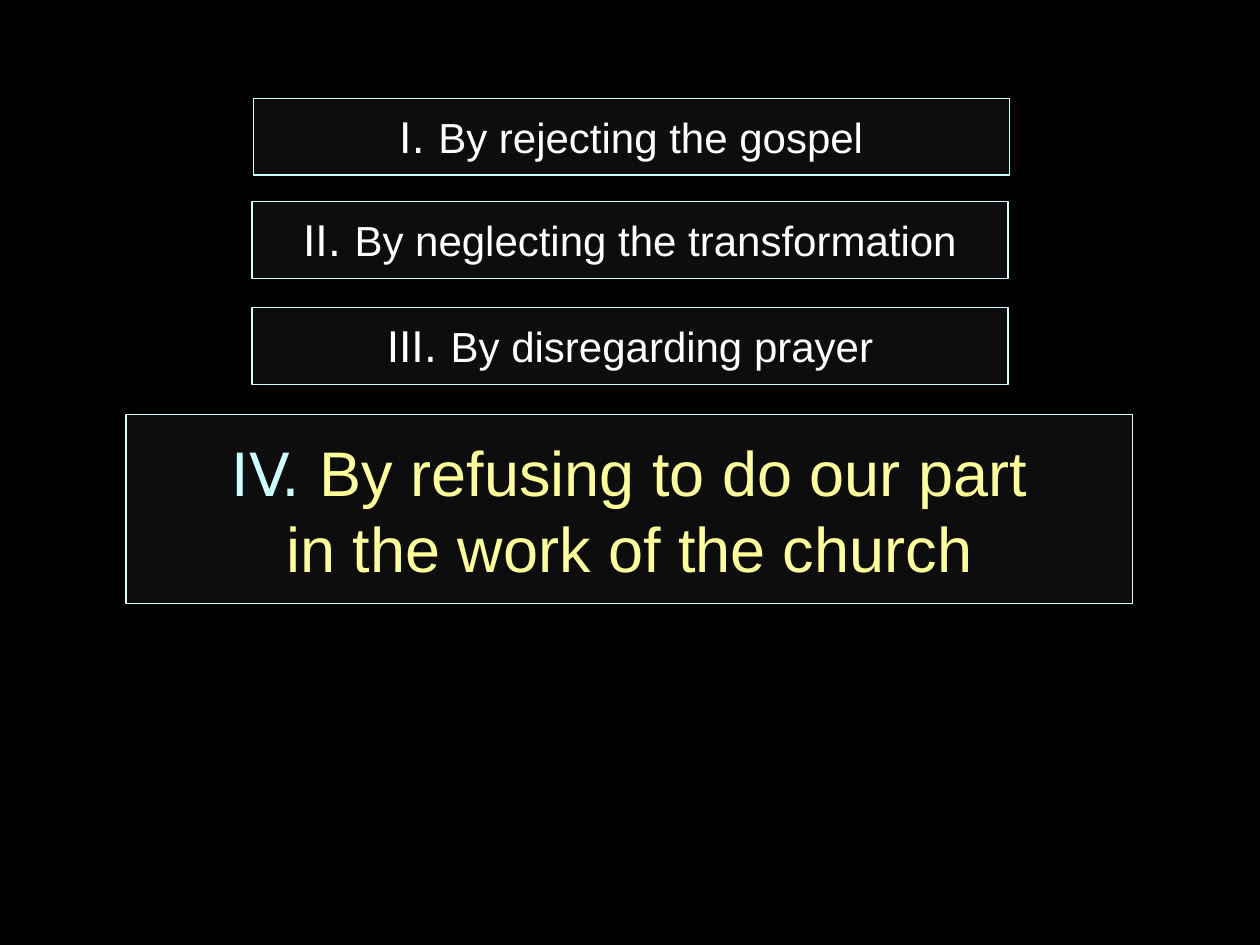
import pptx
import pptx.dml.color
import pptx.enum.shapes
import pptx.enum.text
import pptx.util
from pptx.util import Inches


def color(hex_string):
    return pptx.dml.color.RGBColor.from_string(hex_string)


class OutlineSlide:
    BACKGROUND, BOX_FILL, BORDER = "000000", "0D0D0D", "CCFFFF"
    NUMERAL_FONT, TEXT_FONT = "DejaVu Sans", "Arial"

    def __init__(self, prs):
        self.s = prs.slides.add_slide(prs.slide_layouts[5])  # title only
        fill = self.s.background.fill
        fill.solid()
        fill.fore_color.rgb = color(self.BACKGROUND)

    def title(self, box, *runs):
        sp = self.s.shapes.title
        sp.left, sp.top, sp.width, sp.height = map(Inches, box)
        self.format_box(sp, runs)

    def point(self, box, *runs):
        sp = self.s.shapes.add_shape(
            pptx.enum.shapes.MSO_SHAPE.RECTANGLE, *map(Inches, box))
        sp.shadow.inherit = False
        self.format_box(sp, runs)

    def format_box(self, sp, runs):
        sp.fill.solid()
        sp.fill.fore_color.rgb = color(self.BOX_FILL)
        sp.line.color.rgb = color(self.BORDER)
        sp.line.width = pptx.util.Pt(0.75)
        tf = sp.text_frame
        tf.word_wrap = True
        tf.auto_size = pptx.enum.text.MSO_AUTO_SIZE.NONE
        tf.vertical_anchor = pptx.enum.text.MSO_ANCHOR.MIDDLE
        p = tf.paragraphs[0]
        p.alignment = pptx.enum.text.PP_ALIGN.CENTER
        for text, font, size, hex_string in runs:
            for i, line in enumerate(text.split("\n")):
                if i:
                    p.add_line_break()
                self.add_run(p, line, font, size, hex_string)

    def add_run(self, p, text, font, size, hex_string):
        r = p.add_run()
        r.text = text
        r.font.name = font
        r.font.size = pptx.util.Pt(size)
        r.font.color.rgb = color(hex_string)


def main():
    prs = pptx.Presentation()
    prs.slide_width, prs.slide_height = Inches(10), Inches(7.5)
    slide = OutlineSlide(prs)
    numeral, body = slide.NUMERAL_FONT, slide.TEXT_FONT

    # Earlier points, the first being the slide title
    earlier = [
        (slide.title, 2.01, 0.78, "I. ", "By rejecting the gospel"),
        (slide.point, 2, 1.6, "II. ", "By neglecting the transformation"),
        (slide.point, 2, 2.44, "III. ", "By disregarding prayer"),
    ]
    for add, left, top, number, text in earlier:
        add((left, top, 6, 0.61),
            (number, numeral, 24, "FFFFFF"),
            (text, body, 24, "FFFFFF"))

    # Current point, emphasized
    slide.point((1, 3.29, 7.99, 1.5),
                ("IV. ", numeral, 34, "CCFFFF"),
                ("By refusing to do our part\nin the work of the church",
                 body, 36, "FFFF99"))

    prs.save("out.pptx")


if __name__ == "__main__":
    main()
